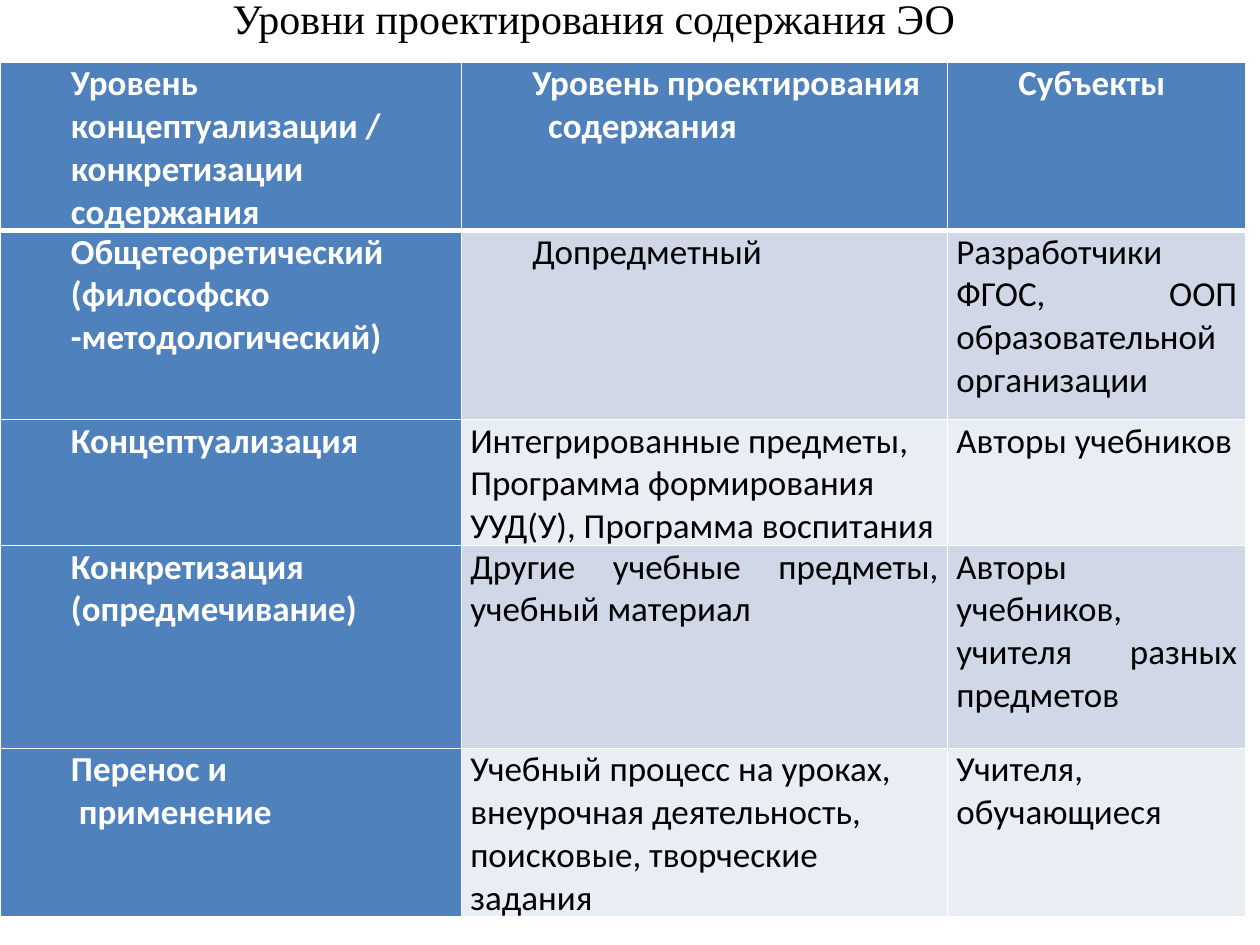
from lxml.etree import SubElement
from pptx import Presentation
from pptx.dml.color import RGBColor
from pptx.enum.text import MSO_ANCHOR, MSO_AUTO_SIZE, PP_ALIGN
from pptx.oxml.ns import qn
from pptx.util import Cm, Pt

WHITE, BLACK = "FFFFFF", "000000"
HEADER_BLUE = "4F81BD"
BANDS = ("E9EDF4", "D0D8E8")
FIRST_LINE_INDENT = 1.25
SPACE_WIDTH = 0.16

COLUMN_WIDTHS = (9.3, 9.8, 6.02)
ROW_HEIGHTS = (2.46, 3.81, 2.46, 4.09, 3.28)
ROWS = (
    (("Уровень", "концептуализации /", "конкретизации", "содержания"),
     ("Уровень проектирования", "содержания"),
     ("Субъекты",)),
    (("Общетеоретический", "(философско", "-методологический)"),
     ("Допредметный",),
     ("Разработчики ФГОС, ООП образовательной организации",)),
    (("Концептуализация",),
     ("Интегрированные предметы, Программа формирования УУД(У), Программа воспитания",),
     ("Авторы учебников",)),
    (("Конкретизация", "(опредмечивание)"),
     ("Другие учебные предметы, учебный материал",),
     ("Авторы учебников, учителя разных предметов",)),
    (("Перенос и", "применение"),
     ("Учебный процесс на уроках, внеурочная деятельность, поисковые, творческие задания",),
     ("Учителя,", "обучающиеся")),
)
INDENTED_BODY_CELLS = {(1, 1)}
LEFT_ALIGNED_CELLS = {(2, 1), (4, 1)}
EXTRA_INDENTS = {"содержания": {(0, 1): 2 * SPACE_WIDTH},
                 "применение": {(4, 0): SPACE_WIDTH}}


def color(value):
    return RGBColor.from_string(value)


def apply_format(target, values):
    for name, value in values.items():
        setattr(target, name, value)


def write_paragraph(paragraph, text, font, hex_color, alignment, indent):
    paragraph.alignment = alignment
    properties = paragraph._p.get_or_add_pPr()
    properties.set("marL", "0")
    properties.set("indent", str(Cm(indent)))
    run = paragraph.add_run()
    run.text = text
    apply_format(run.font, font)
    run.font.color.rgb = color(hex_color)


def set_borders(cell, bottom_width):
    properties = cell._tc.get_or_add_tcPr()
    for side in "LRTB":
        width = bottom_width if side == "B" else 1
        line = SubElement(properties, qn(f"a:ln{side}"), w=str(Pt(width)))
        fill = SubElement(line, qn("a:solidFill"))
        SubElement(fill, qn("a:srgbClr"), val=WHITE)


def write_cell(cell, position, lines):
    row, column = position
    heading = row == 0 or column == 0
    set_borders(cell, 3 if row == 0 else 1)
    cell.fill.solid()
    cell.fill.fore_color.rgb = color(HEADER_BLUE if heading else BANDS[row % 2])
    apply_format(cell, {"margin_left": Cm(0.18), "margin_right": Cm(0.18),
                        "margin_top": 0, "margin_bottom": 0,
                        "vertical_anchor": MSO_ANCHOR.TOP})
    font = {"name": "Calibri", "size": Pt(20), "bold": heading}
    alignment = PP_ALIGN.LEFT if position in LEFT_ALIGNED_CELLS else PP_ALIGN.JUSTIFY
    indent = FIRST_LINE_INDENT if heading or position in INDENTED_BODY_CELLS else 0
    frame = cell.text_frame
    for index, text in enumerate(lines):
        paragraph = frame.add_paragraph() if index else frame.paragraphs[0]
        extra = EXTRA_INDENTS.get(text, {}).get(position, 0)
        write_paragraph(paragraph, text, font, WHITE if heading else BLACK,
                        alignment, indent + extra)


def add_title(slide, text):
    title = slide.shapes.title
    apply_format(title, {"left": Cm(3.18), "top": Cm(-0.28),
                         "width": Cm(16.51), "height": Cm(1.27)})
    frame = title.text_frame
    apply_format(frame, {"word_wrap": False, "auto_size": MSO_AUTO_SIZE.SHAPE_TO_FIT_TEXT,
                         "vertical_anchor": MSO_ANCHOR.MIDDLE})
    write_paragraph(frame.paragraphs[0], text,
                    {"name": "Times New Roman", "size": Pt(24)},
                    BLACK, PP_ALIGN.LEFT, FIRST_LINE_INDENT)


def add_levels_table(slide):
    table = slide.shapes.add_table(
        len(ROWS), len(COLUMN_WIDTHS), Cm(0), Cm(1.26),
        Cm(sum(COLUMN_WIDTHS)), Cm(sum(ROW_HEIGHTS))).table
    for column, width in zip(table.columns, COLUMN_WIDTHS):
        column.width = Cm(width)
    for row, height in zip(table.rows, ROW_HEIGHTS):
        row.height = Cm(height)
    for row_index, row in enumerate(ROWS):
        for column_index, lines in enumerate(row):
            write_cell(table.cell(row_index, column_index),
                       (row_index, column_index), lines)


def main():
    presentation = Presentation()
    apply_format(presentation, {"slide_width": Cm(25.4), "slide_height": Cm(19.05)})
    slide = presentation.slides.add_slide(presentation.slide_layouts[5])
    add_title(slide, "Уровни проектирования содержания ЭО")
    add_levels_table(slide)
    presentation.save("out.pptx")


if __name__ == "__main__":
    main()
